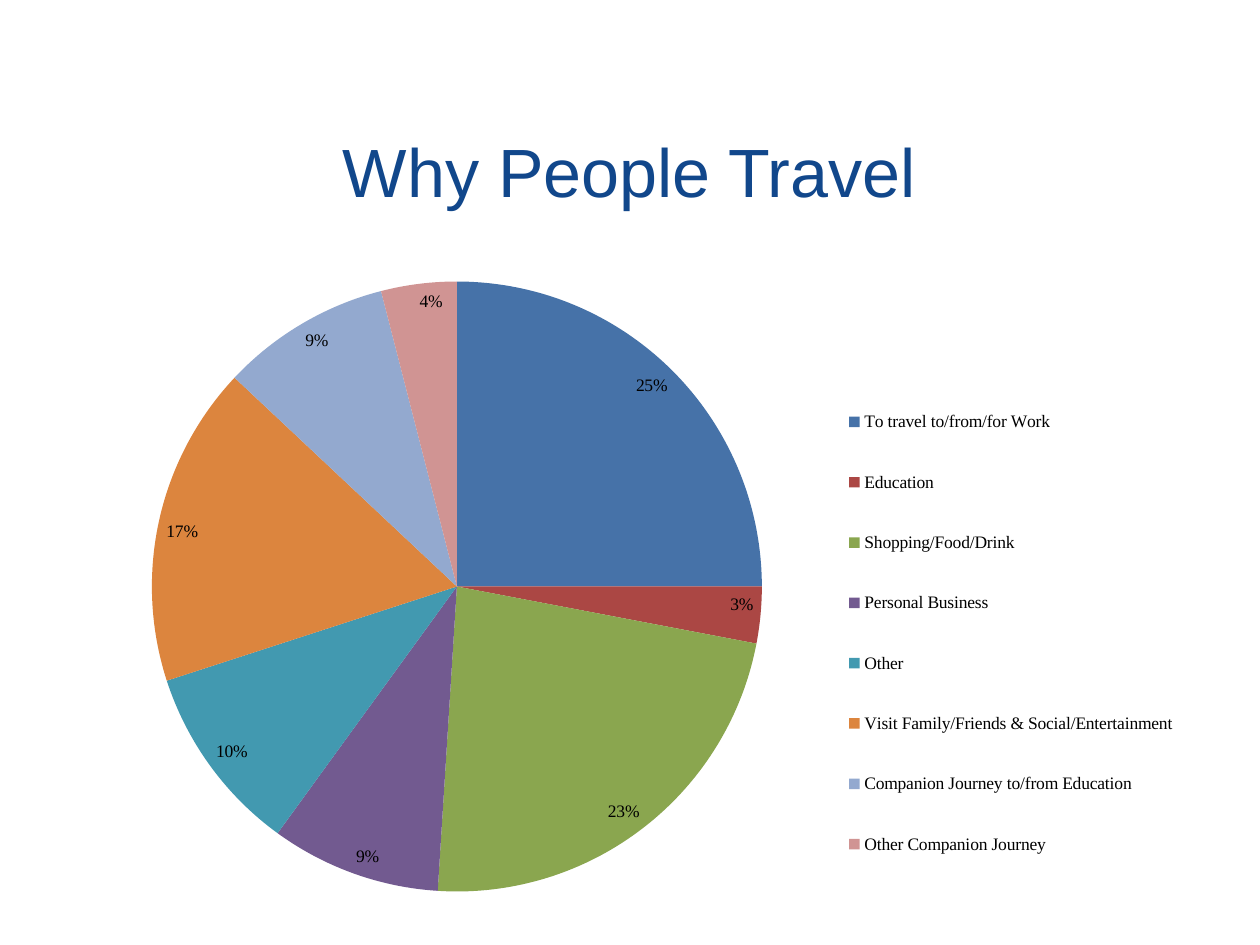
from dataclasses import dataclass

from pptx import Presentation
from pptx.chart.chart import Chart
from pptx.chart.data import CategoryChartData
from pptx.dml.color import RGBColor
from pptx.enum.chart import XL_CHART_TYPE, XL_LABEL_POSITION, XL_LEGEND_POSITION
from pptx.enum.text import MSO_ANCHOR, PP_ALIGN
from pptx.oxml import parse_xml
from pptx.oxml.ns import nsdecls
from pptx.util import Pt

COLORS = {
    "title": "11478B",
    "text": "000000",
    "blue": "4672A8",
    "red": "AB4744",
    "green": "8AA64F",
    "purple": "725A90",
    "teal": "4299B0",
    "orange": "DC853E",
    "light blue": "93A9CF",
    "pink": "D09493",
}
LEFT, WIDTH = Pt(16.5), Pt(686)
CHART_HEIGHT = Pt(369)


@dataclass
class Purpose:
    name: str
    percent: int
    color: str


@dataclass
class Area:
    """A place inside the chart, measured from its top left corner."""
    left: int
    top: int
    width: int
    height: int


PURPOSES = [
    Purpose("To travel to/from/for Work", 25, "blue"),
    Purpose("Education", 3, "red"),
    Purpose("Shopping/Food/Drink", 23, "green"),
    Purpose("Personal Business", 9, "purple"),
    Purpose("Other", 10, "teal"),
    Purpose("Visit Family/Friends & Social/Entertainment", 17, "orange"),
    Purpose("Companion Journey to/from Education", 9, "light blue"),
    Purpose("Other Companion Journey", 4, "pink"),
]
PIE_AREA = Area(Pt(70.3), Pt(9.9), Pt(348.6), Pt(348.6))
LEGEND_AREA = Area(Pt(454.5), Pt(61.3), Pt(213), Pt(299))


def rgb(name: str) -> RGBColor:
    return RGBColor.from_string(COLORS[name])


def format_font(font, *, name: str, size: float, color: str) -> None:
    font.name = name
    font.size = Pt(size)
    font.color.rgb = rgb(color)


def add_title(slide, text: str, **font_format) -> None:
    title = slide.shapes.title
    title.left, title.top, title.width, title.height = LEFT, Pt(54.5), WIDTH, Pt(85)
    frame = title.text_frame
    frame.vertical_anchor = MSO_ANCHOR.MIDDLE
    para = frame.paragraphs[0]
    para.alignment = PP_ALIGN.CENTER
    span = para.add_run()
    span.text = text
    format_font(span.font, **font_format)


def place_part(chart: Chart, part: str, area: Area, *, index: int, inner: bool = False) -> None:
    """Give a chart part a manual layout, as child number index of its element."""
    parent = chart.element.xpath(f"c:chart/c:{part}")[0]
    for old in parent.xpath("c:layout"):
        parent.remove(old)
    target = '<c:layoutTarget val="inner"/>' if inner else ""
    parent.insert(index, parse_xml(
        f'<c:layout {nsdecls("c")}><c:manualLayout>{target}'
        '<c:xMode val="edge"/><c:yMode val="edge"/>'
        f'<c:x val="{area.left / WIDTH}"/><c:y val="{area.top / CHART_HEIGHT}"/>'
        f'<c:w val="{area.width / WIDTH}"/><c:h val="{area.height / CHART_HEIGHT}"/>'
        '</c:manualLayout></c:layout>'))


def add_pie(slide, purposes: list[Purpose]) -> None:
    data = CategoryChartData(number_format="0")
    data.categories = [purpose.name for purpose in purposes]
    data.add_series("Series 1", [purpose.percent for purpose in purposes])
    chart = slide.shapes.add_chart(
        XL_CHART_TYPE.PIE, LEFT, Pt(151), WIDTH, CHART_HEIGHT, data).chart
    chart.has_title = False
    format_font(chart.font, name="Times New Roman", size=10, color="text")

    chart.has_legend = True
    chart.legend.position = XL_LEGEND_POSITION.RIGHT
    chart.legend.include_in_layout = False

    plot = chart.plots[0]
    plot.vary_by_categories = True
    for index, purpose in enumerate(purposes):
        fill = plot.series[0].points[index].format.fill
        fill.solid()
        fill.fore_color.rgb = rgb(purpose.color)

    plot.has_data_labels = True
    labels = plot.data_labels
    labels.show_value = True
    labels.number_format = '0"%"'
    labels.number_format_is_linked = False
    labels.position = XL_LABEL_POSITION.INSIDE_END

    place_part(chart, "plotArea", PIE_AREA, index=0, inner=True)
    place_part(chart, "legend", LEGEND_AREA, index=1)


def main() -> None:
    deck = Presentation()
    deck.slide_width, deck.slide_height = Pt(720), Pt(540)
    slide = deck.slides.add_slide(deck.slide_layouts[5])
    add_title(slide, "Why People Travel", name="Arial", size=39, color="title")
    add_pie(slide, PURPOSES)
    deck.save("out.pptx")


if __name__ == "__main__":
    main()
